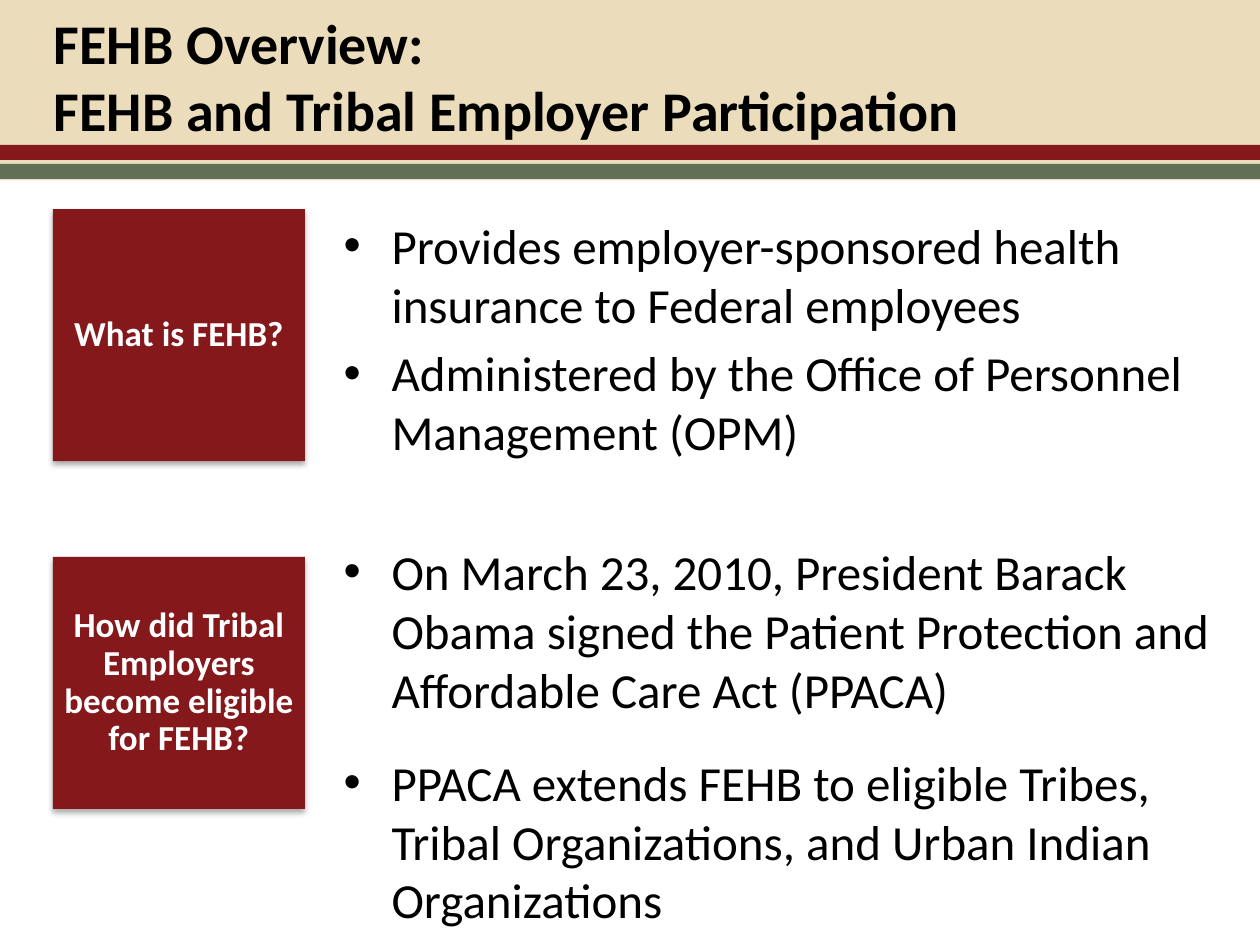
from dataclasses import dataclass

from lxml import etree
from pptx import Presentation
from pptx import util as u
from pptx.dml.color import RGBColor
from pptx.enum import shapes, text
from pptx.oxml import ns


@dataclass(frozen=True)
class Theme:
    font: str = "Calibri"
    sand: str = "EBDCBB"
    red: str = "84181B"
    green: str = "616F57"
    black: str = "000000"
    white: str = "FFFFFF"
    title_size: int = 32
    label_size: int = 20
    body_size: int = 28


THEME = Theme()

# Label, label top, side inset, bullets top, bullets height, bullet gap (pt), bullets
SECTIONS = [
    ("What is FEHB?", 1.66, 0.1, 1.66, 2.8, 5.6, [
        "Provides employer-sponsored health insurance to Federal employees",
        "Administered by the Office of Personnel Management (OPM)",
    ]),
    ("How did Tribal Employers become eligible for FEHB?", 4.42, 0, 4.25, 2.93, 19.5, [
        "On March 23, 2010, President Barack Obama signed the "
        "Patient Protection and Affordable Care Act (PPACA)",
        "PPACA extends FEHB to eligible Tribes, Tribal Organizations, "
        "and Urban Indian Organizations",
    ]),
]


def style(para, size, color, bold=False):
    for span in para.runs:
        span.font.name = THEME.font
        span.font.size = u.Pt(size)
        span.font.bold = bold
        span.font.color.rgb = RGBColor.from_string(color)


def add_rectangle(page, left, top, width, height, color):
    box = page.shapes.add_shape(
        shapes.MSO_SHAPE.RECTANGLE,
        u.Inches(left), u.Inches(top), u.Inches(width), u.Inches(height))
    box.shadow.inherit = False
    box.fill.solid()
    box.fill.fore_color.rgb = RGBColor.from_string(color)
    box.line.fill.background()
    return box


def add_text_box(page, left, top, width, height):
    box = page.shapes.add_textbox(
        u.Inches(left), u.Inches(top), u.Inches(width), u.Inches(height))
    box.text_frame.word_wrap = True
    return box.text_frame


def add_soft_shadow(box):
    effects = box._element.spPr.find(ns.qn("a:effectLst"))
    shadow = etree.SubElement(
        effects, ns.qn("a:outerShdw"), blurRad=str(u.Pt(3.5)),
        dist=str(u.Pt(2.2)), dir="5400000", rotWithShape="0")
    color = etree.SubElement(shadow, ns.qn("a:srgbClr"), val=THEME.black)
    etree.SubElement(color, ns.qn("a:alpha"), val="32000")


def add_title(page, wording):
    frame = add_text_box(page, 0.33, 0, 8.5, 1.2)
    frame.vertical_anchor = text.MSO_ANCHOR.MIDDLE
    para = frame.paragraphs[0]
    para.text = wording
    style(para, THEME.title_size, THEME.black, bold=True)


def add_label(page, wording, top, side_inset):
    box = add_rectangle(page, 0.42, top, 2, 2, THEME.red)
    add_soft_shadow(box)
    frame = box.text_frame
    frame.word_wrap = True
    frame.vertical_anchor = text.MSO_ANCHOR.MIDDLE
    frame.margin_left = frame.margin_right = u.Inches(side_inset)
    frame.margin_top = frame.margin_bottom = u.Inches(0.24)
    frame.text = wording
    para = frame.paragraphs[0]
    para.alignment = text.PP_ALIGN.CENTER
    para.line_spacing = 0.9
    style(para, THEME.label_size, THEME.white, bold=True)


def add_bullets(page, items, top, height, gap):
    frame = add_text_box(page, 2.63, top, 7.1, height)
    for index, item in enumerate(items):
        para = frame.add_paragraph() if index else frame.paragraphs[0]
        para.text = item
        properties = para._p.get_or_add_pPr()
        properties.set("marL", str(u.Inches(0.38)))
        properties.set("indent", str(u.Inches(-0.38)))
        etree.SubElement(properties, ns.qn("a:buFont"), typeface="Arial")
        etree.SubElement(properties, ns.qn("a:buChar"), char="•")
        if index:
            para.space_before = u.Pt(gap)
        style(para, THEME.body_size, THEME.black)


def main():
    deck = Presentation()
    deck.slide_width, deck.slide_height = u.Inches(10), u.Inches(7.5)
    page = deck.slides.add_slide(deck.slide_layouts[6])

    # Header band with its two stripes
    add_rectangle(page, 0, 0, 10, 1.43, THEME.sand)
    add_rectangle(page, 0, 1.15, 10, 0.12, THEME.red)
    add_rectangle(page, 0, 1.3, 10, 0.12, THEME.green)
    add_title(page, "FEHB Overview:\vFEHB and Tribal Employer Participation")

    # Questions on the left, answers on the right
    for label, label_top, inset, top, height, gap, items in SECTIONS:
        add_label(page, label, label_top, inset)
        add_bullets(page, items, top, height, gap)

    deck.save("out.pptx")


if __name__ == "__main__":
    main()
